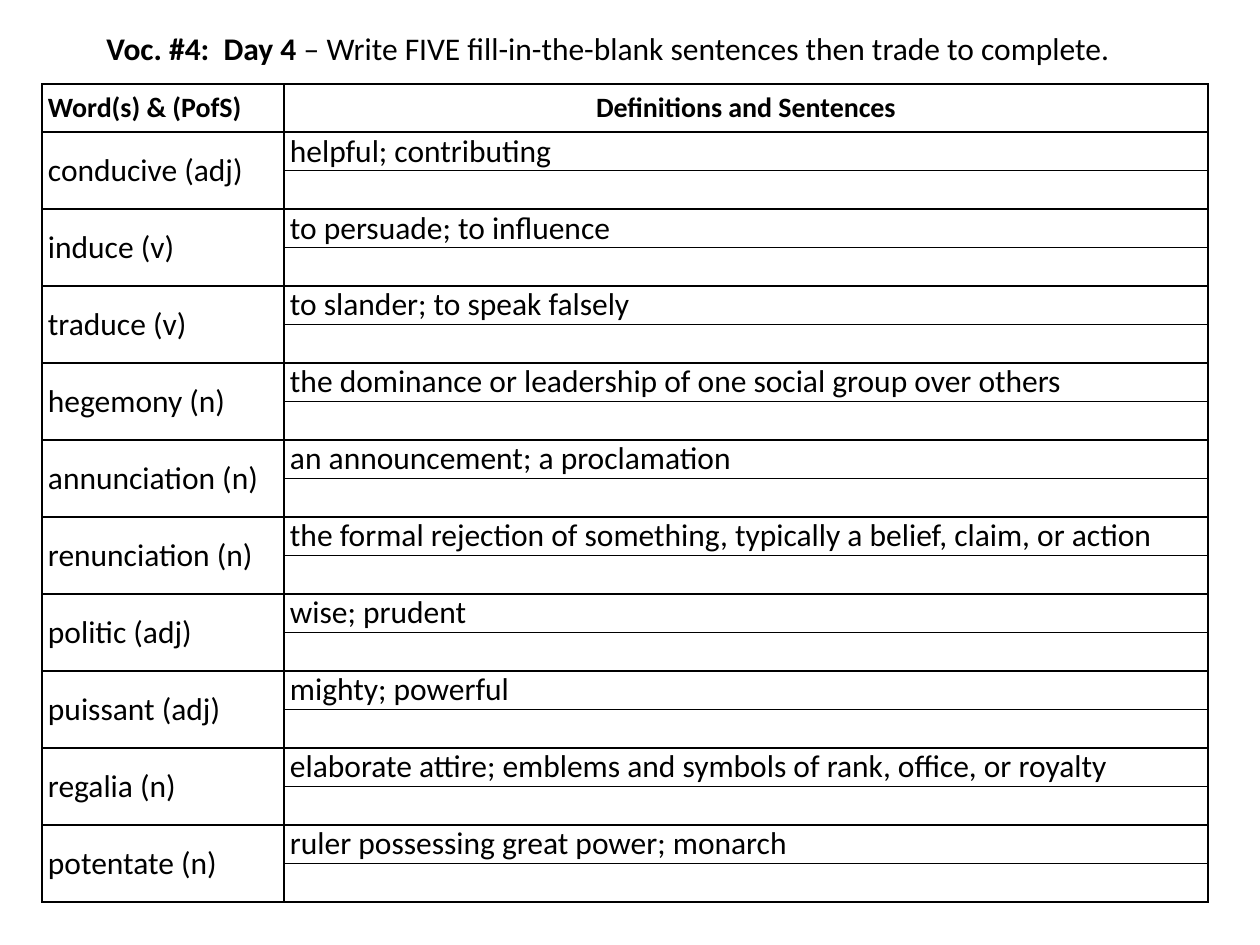
from lxml import etree
from pptx import Presentation
from pptx.dml.color import RGBColor
from pptx.enum.text import MSO_ANCHOR, PP_ALIGN
from pptx.oxml.ns import qn
from pptx.util import Pt

PX = 914400 // 126
BLACK = RGBColor(0, 0, 0)
MIDDLE = MSO_ANCHOR.MIDDLE
LEFT, CENTER = PP_ALIGN.LEFT, PP_ALIGN.CENTER
HEADER_H, ROW_H = 48, 38
WORD_W, DEFINITION_W = 242, 924

VOCABULARY = [
    ("conducive (adj)", "helpful; contributing"),
    ("induce (v)", "to persuade; to influence"),
    ("traduce (v)", "to slander; to speak falsely"),
    ("hegemony (n)", "the dominance or leadership of one social group over others"),
    ("annunciation (n)", "an announcement; a proclamation"),
    ("renunciation (n)", "the formal rejection of something, typically a belief, claim, or action"),
    ("politic (adj)", "wise; prudent"),
    ("puissant (adj)", "mighty; powerful"),
    ("regalia (n)", "elaborate attire; emblems and symbols of rank, office, or royalty"),
    ("potentate (n)", "ruler possessing great power; monarch"),
]


def write(paragraph, text, size, bold=False):
    run = paragraph.add_run()
    run.text = text
    run.font.color.rgb = BLACK
    for key, value in {"name": "Calibri", "size": Pt(size), "bold": bold}.items():
        setattr(run.font, key, value)


def format_cell(cell):
    layout = {"margin_left": 6 * PX, "margin_right": 6 * PX, "margin_top": 0,
              "margin_bottom": 0, "vertical_anchor": MIDDLE}
    for key, value in layout.items():
        setattr(cell, key, value)
    properties = cell._tc.get_or_add_tcPr()
    for side in ("lnL", "lnR", "lnT", "lnB"):
        border = etree.SubElement(properties, qn(f"a:{side}"), w=str(Pt(1)))
        fill = etree.SubElement(border, qn("a:solidFill"))
        etree.SubElement(fill, qn("a:srgbClr"), val=str(BLACK))
    cell.fill.background()
    cell.text_frame.paragraphs[0].font.size = Pt(18)


prs = Presentation()
prs.slide_width, prs.slide_height = 1260 * PX, 945 * PX
slide = prs.slides.add_slide(prs.slide_layouts[6])

# Vocabulary grid: a header, then two rows for each word
row_count = 1 + 2 * len(VOCABULARY)
grid = slide.shapes.add_table(
    row_count, 2, 42 * PX, 84 * PX, (WORD_W + DEFINITION_W) * PX,
    (HEADER_H + ROW_H * (row_count - 1)) * PX).table
grid.first_row = grid.horz_banding = False
for column, width in zip(grid.columns, (WORD_W, DEFINITION_W)):
    column.width = width * PX
for index, row in enumerate(grid.rows):
    row.height = (ROW_H if index else HEADER_H) * PX
    for cell in row.cells:
        format_cell(cell)

# Header row
for column, (heading, align) in enumerate(
        [("Word(s) & (PofS)", LEFT), ("Definitions and Sentences", CENTER)]):
    paragraph = grid.cell(0, column).text_frame.paragraphs[0]
    paragraph.alignment = align
    write(paragraph, heading, 16, bold=True)

# Words with their definitions, and an empty row for the sentence
for index, entry in enumerate(VOCABULARY):
    top = 1 + 2 * index
    grid.cell(top, 0).merge(grid.cell(top + 1, 0))
    for column, text in enumerate(entry):
        write(grid.cell(top, column).text_frame.paragraphs[0], text, 18)

# Assignment line above the grid
assignment = slide.shapes.add_textbox(31 * PX, 22 * PX, 1113 * PX, 51 * PX).text_frame
assignment.word_wrap = True
assignment.vertical_anchor = MIDDLE
paragraph = assignment.paragraphs[0]
paragraph._p.get_or_add_pPr().set("indent", str(63 * PX))
write(paragraph, "Voc. #4:  Day 4 ", 18, bold=True)
write(paragraph, "– Write FIVE fill-in-the-blank sentences then trade to complete.", 18)

prs.save("out.pptx")
